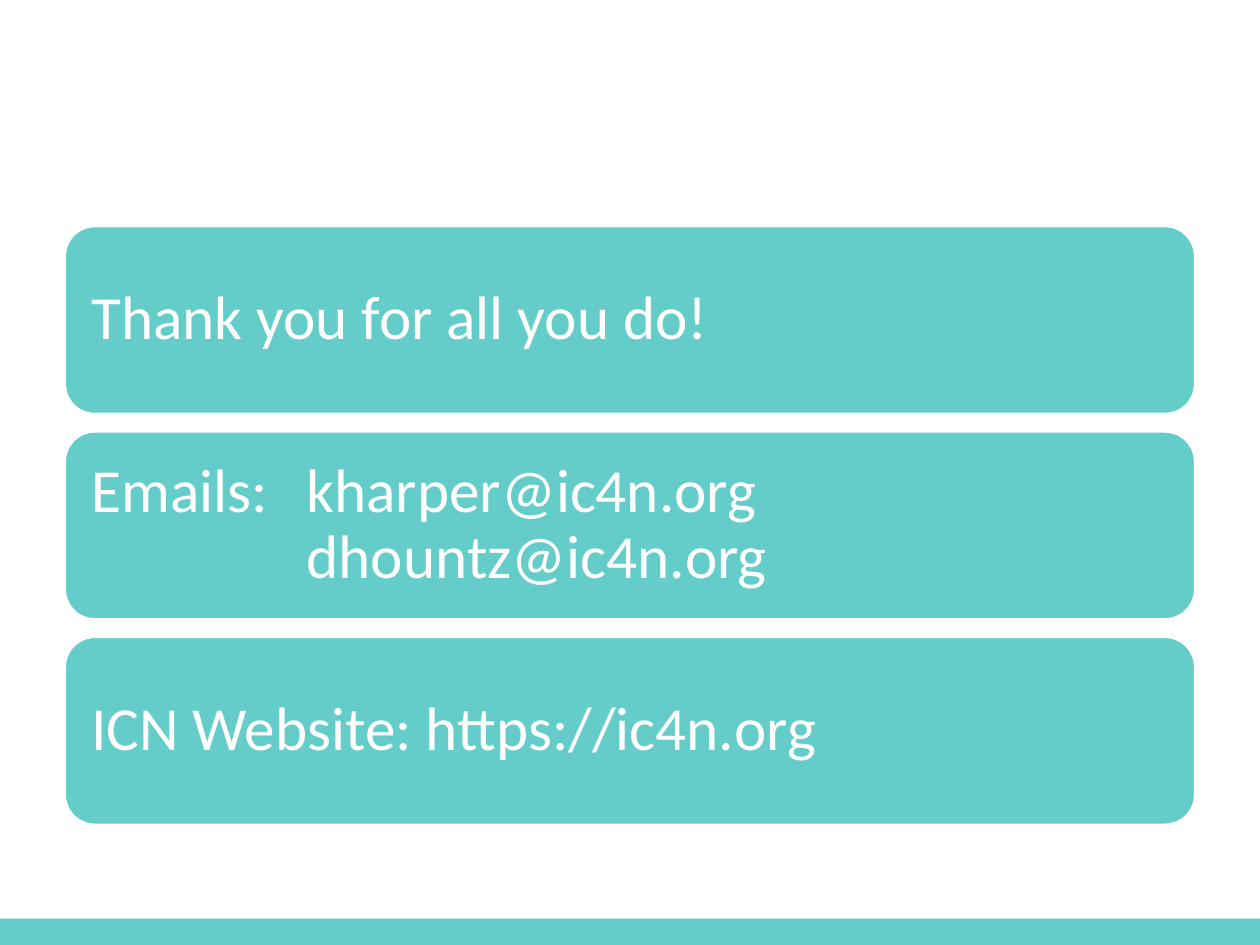
from lxml import etree
from pptx import Presentation
from pptx.dml.color import RGBColor
from pptx.enum.shapes import MSO_SHAPE
from pptx.enum.text import MSO_ANCHOR, PP_ALIGN
from pptx.oxml.ns import qn
from pptx.util import Inches, Pt

COLORS = {"teal": "64CCC9", "white": "FFFFFF"}
MESSAGES = [
    "Thank you for all you do!",
    "Emails:\tkharper@ic4n.org\v\tdhountz@ic4n.org",
    "ICN Website: https://ic4n.org",
]


def color(name):
    return RGBColor.from_string(COLORS[name])


def add_panel(slide, kind, left, top, width, height):
    sp = slide.shapes.add_shape(kind, Inches(left), Inches(top), Inches(width), Inches(height))
    sp.shadow.inherit = False
    sp.fill.solid()
    sp.fill.fore_color.rgb = color("teal")
    return sp


def add_footer_bar(slide, left, top, width, height):
    add_panel(slide, MSO_SHAPE.RECTANGLE, left, top, width, height).line.fill.background()


def add_tab_stop(p, position):
    tabs = etree.SubElement(p._p.get_or_add_pPr(), qn("a:tabLst"))
    etree.SubElement(tabs, qn("a:tab"), pos=str(Inches(position)), algn="l")


def add_message(slide, text, left, top, width, height):
    sp = add_panel(slide, MSO_SHAPE.ROUNDED_RECTANGLE, left, top, width, height)
    sp.line.color.rgb = color("white")
    sp.line.width = Pt(3.5)

    tf = sp.text_frame
    tf.word_wrap = True
    tf.vertical_anchor = MSO_ANCHOR.MIDDLE
    tf.margin_left = tf.margin_right = tf.margin_top = tf.margin_bottom = Inches(0.15)
    p = tf.paragraphs[0]
    p.text = text
    p.alignment = PP_ALIGN.LEFT
    p.line_spacing = 0.9
    if "\t" in text:
        add_tab_stop(p, 1.71)
    for r in p.runs:
        r.font.name = "Calibri"
        r.font.size = Pt(35)
        r.font.color.rgb = color("white")


def add_message_stack(slide, left, top, width, height, gap=0.11):
    box_height = (height - gap * (len(MESSAGES) - 1)) / len(MESSAGES)
    for i, text in enumerate(MESSAGES):
        add_message(slide, text, left, top + i * (box_height + gap), width, box_height)


def main():
    prs = Presentation()
    prs.slide_width, prs.slide_height = Inches(10), Inches(7.5)
    slide = prs.slides.add_slide(prs.slide_layouts[6])

    # Bar along the bottom edge
    add_footer_bar(slide, 0, 7.29, 10, 0.21)
    # Closing messages
    add_message_stack(slide, 0.5, 1.78, 9, 4.78)

    prs.save("out.pptx")


if __name__ == "__main__":
    main()
